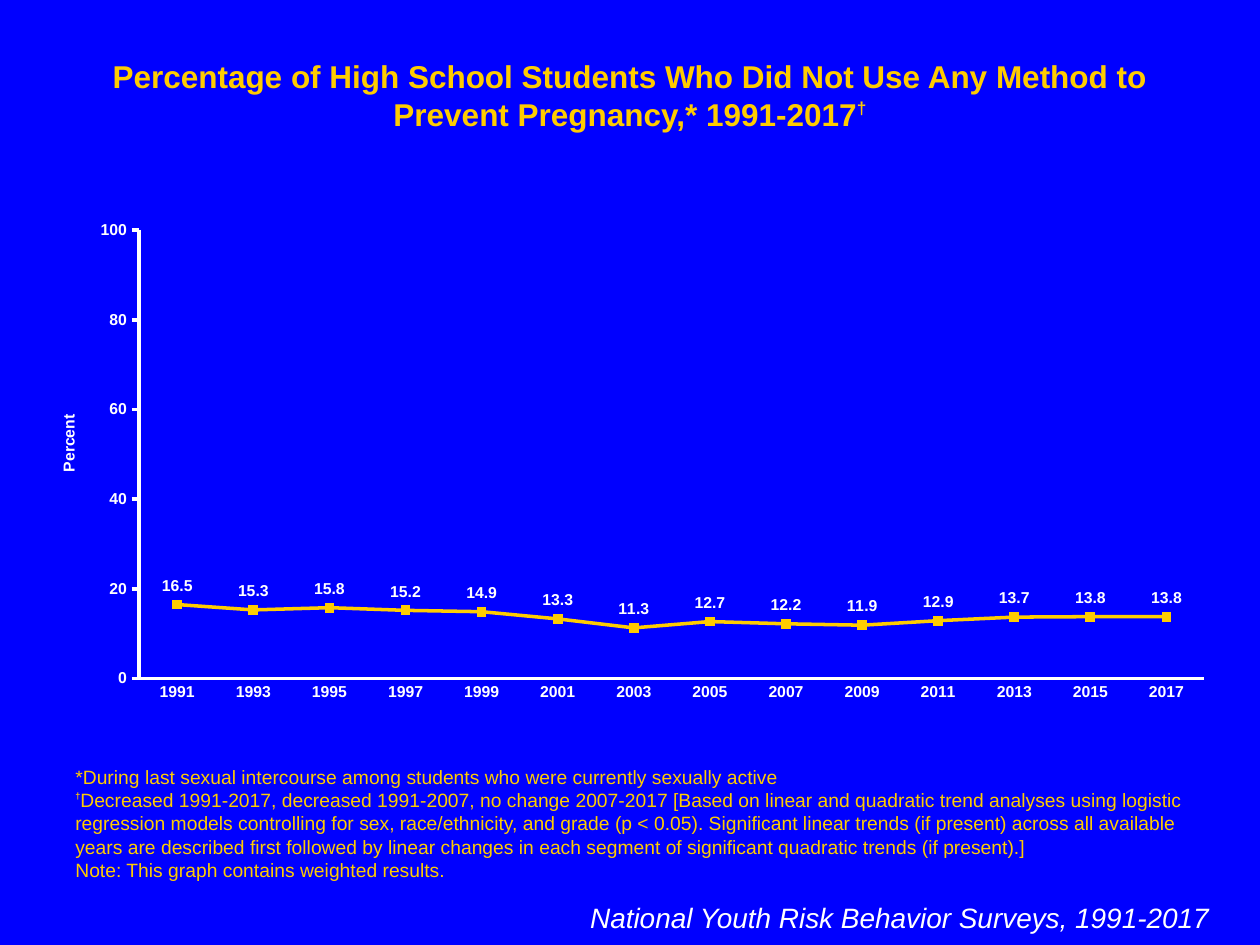
from lxml import etree
from pptx import Presentation
from pptx.chart.data import CategoryChartData
from pptx.dml.color import RGBColor
from pptx.enum import chart as ch, text
from pptx.oxml import ns
from pptx.util import Pt

COLORS = {"background": "0000FF", "gold": "FFCC00", "white": "FFFFFF"}
RGB = {name: RGBColor.from_string(value) for name, value in COLORS.items()}


def style(font, size, color, bold=False, italic=False, baseline=0):
    """Format a font; baseline is the superscript rise in percent."""
    font.name, font.size = "Arial", Pt(size)
    font.bold, font.italic = bold, italic
    font.color.rgb = RGB[color]
    if baseline:
        font._element.set("baseline", str(baseline * 1000))


def set_layout(parent, index, **fractions):
    """Place a chart part by fractions of the chart's size."""
    for old in parent.findall(ns.qn("c:layout")):
        parent.remove(old)
    layout = etree.Element(ns.qn("c:layout"))
    manual = etree.SubElement(layout, ns.qn("c:manualLayout"))
    if "w" in fractions:
        etree.SubElement(manual, ns.qn("c:layoutTarget")).set("val", "inner")
    for key in ("x", "y"):
        etree.SubElement(manual, ns.qn(f"c:{key}Mode")).set("val", "edge")
    for key, value in fractions.items():
        etree.SubElement(manual, ns.qn(f"c:{key}")).set("val", str(value))
    parent.insert(index, layout)


prs = Presentation()
prs.slide_width, prs.slide_height = Pt(720), Pt(540)
s = prs.slides.add_slide(prs.slide_layouts[5])
s.background.fill.solid()
s.background.fill.fore_color.rgb = RGB["background"]

# Title
title = s.shapes.title
title.left, title.top, title.width, title.height = Pt(36), Pt(29), Pt(648), Pt(50)
tf = title.text_frame
tf.word_wrap = True
tf.auto_size = text.MSO_AUTO_SIZE.NONE
tf.vertical_anchor = text.MSO_ANCHOR.TOP
p = tf.paragraphs[0]
p.alignment = text.PP_ALIGN.CENTER
r = p.add_run()
r.text = ("Percentage of High School Students Who Did Not Use Any Method to "
          "Prevent Pregnancy,* 1991-2017")
style(r.font, 18, "gold", bold=True)
r = p.add_run()
r.text = "†"
style(r.font, 17, "gold", bold=True, baseline=40)

# Line chart
data = CategoryChartData(number_format="#,##0.0")
data.categories = [str(year) for year in range(1991, 2018, 2)]
data.add_series("Series 1", [16.5, 15.3, 15.8, 15.2, 14.9, 13.3, 11.3,
                             12.7, 12.2, 11.9, 12.9, 13.7, 13.8, 13.8])
chart = s.shapes.add_chart(ch.XL_CHART_TYPE.LINE_MARKERS, Pt(18), Pt(120),
                           Pt(684), Pt(288), data).chart
chart.has_legend = False
chart.has_title = False
style(chart.font, 18, "white")
set_layout(chart._chartSpace.chart.plotArea, 0, x=0.09, y=0.04, w=0.89, h=0.89)

years, percent = chart.category_axis, chart.value_axis
for axis, tick in ((years, ch.XL_TICK_MARK.NONE), (percent, ch.XL_TICK_MARK.OUTSIDE)):
    axis.major_tick_mark = tick
    axis.minor_tick_mark = ch.XL_TICK_MARK.NONE
    axis.has_major_gridlines = False
    axis.format.line.width = Pt(2)
    axis.format.line.color.rgb = RGB["white"]
    style(axis.tick_labels.font, 9, "white", bold=True)
percent.minimum_scale, percent.maximum_scale, percent.major_unit = 0, 100, 20
percent.tick_labels.number_format = "#,##0"
percent.tick_labels.number_format_is_linked = False
percent.axis_title.text_frame.text = "Percent"
style(percent.axis_title.text_frame.paragraphs[0].runs[0].font, 9, "white", bold=True)
set_layout(percent.axis_title._element, 1, x=0.02, y=0.4)

plot = chart.plots[0]
plot.vary_by_categories = False
series = plot.series[0]
series.smooth = False
series.format.line.width = Pt(2)
series.format.line.color.rgb = RGB["gold"]
series.marker.style = ch.XL_MARKER_STYLE.SQUARE
series.marker.size = 5
series.marker.format.fill.solid()
series.marker.format.fill.fore_color.rgb = RGB["gold"]
series.marker.format.line.color.rgb = RGB["gold"]
labels = series.data_labels
labels.show_value = True
labels.position = ch.XL_LABEL_POSITION.ABOVE
labels.number_format = "#,##0.0"
labels.number_format_is_linked = False
style(labels.font, 9, "white", bold=True)

# Footnotes
notes = [
    ("", "*During last sexual intercourse among students who were currently sexually active"),
    ("†", "Decreased 1991-2017, decreased 1991-2007, no change 2007-2017 [Based on linear "
          "and quadratic trend analyses using logistic regression models controlling for sex, "
          "race/ethnicity, and grade (p < 0.05). Significant linear trends (if present) across "
          "all available years are described first followed by linear changes in each segment "
          "of significant quadratic trends (if present).]"),
    ("", "Note: This graph contains weighted results."),
]
tf = s.shapes.add_textbox(Pt(36), Pt(434), Pt(648), Pt(73)).text_frame
tf.word_wrap = True
tf.vertical_anchor = text.MSO_ANCHOR.BOTTOM
for i, (mark, note) in enumerate(notes):
    p = tf.add_paragraph() if i else tf.paragraphs[0]
    if mark:
        r = p.add_run()
        r.text = mark
        style(r.font, 9, "gold", bold=True, baseline=50)
    r = p.add_run()
    r.text = note
    style(r.font, 11, "gold")

# Survey name
tf = s.shapes.add_textbox(Pt(326), Pt(511), Pt(372), Pt(27)).text_frame
tf.word_wrap = True
p = tf.paragraphs[0]
p.text = "National Youth Risk Behavior Surveys, 1991-2017"
p.alignment = text.PP_ALIGN.RIGHT
style(p.runs[0].font, 16, "white", italic=True)

prs.save("out.pptx")
